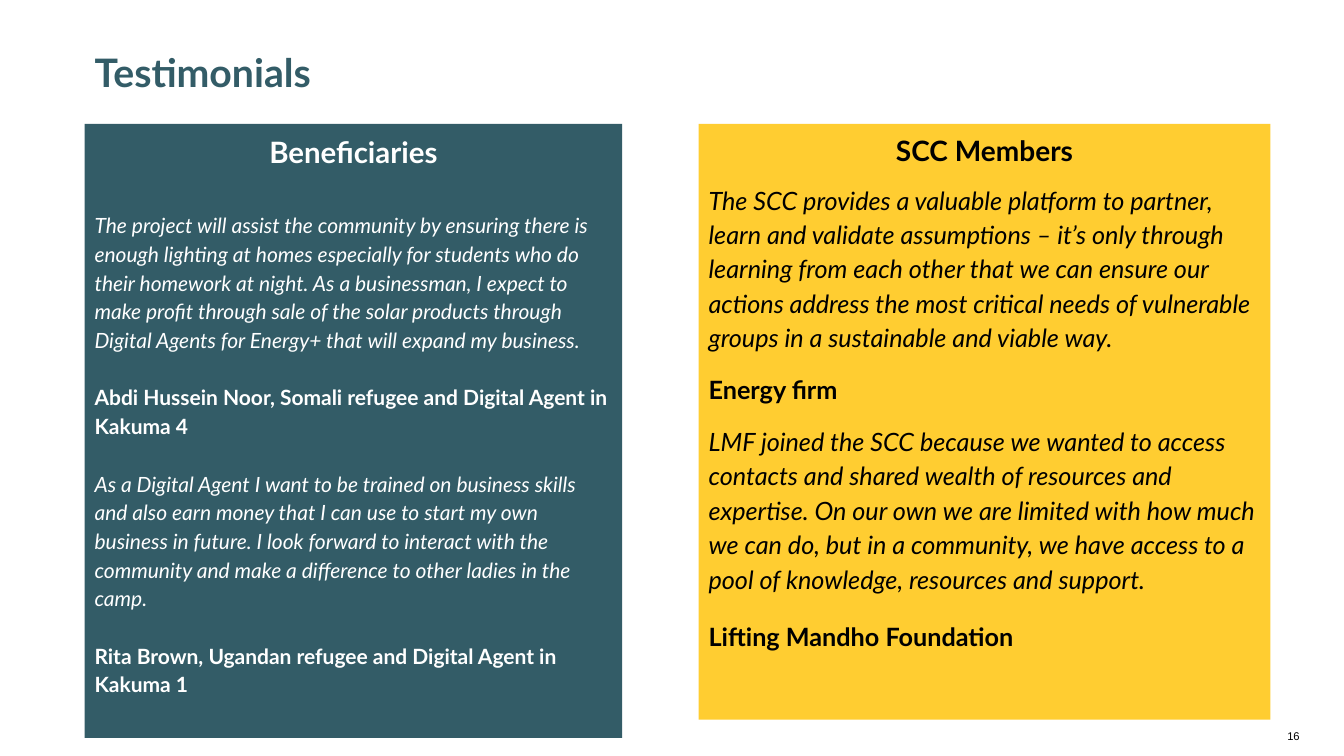
from pptx import Presentation
from pptx.dml.color import RGBColor
from pptx.enum.shapes import MSO_SHAPE
from pptx.enum.text import MSO_ANCHOR, PP_ALIGN
from pptx.util import Inches, Pt

COLORS = {"teal": "335C67", "gold": "FFCD31", "white": "FFFFFF", "black": "000000"}


def rgb(name):
    return RGBColor.from_string(COLORS[name])


def write(para, text, size, color, font="Lato", bold=False, italic=False):
    para.text = text
    for run in para.runs:
        run.font.name = font
        run.font.size = Pt(size)
        run.font.bold = bold
        run.font.italic = italic
        run.font.color.rgb = rgb(color)


deck = Presentation()
deck.slide_width, deck.slide_height = Inches(13.33), Inches(7.5)
slide = deck.slides.add_slide(deck.slide_layouts[6])

# Title
title = slide.shapes.add_textbox(Inches(0.84), Inches(0.51), Inches(10.03), Inches(0.49))
frame = title.text_frame
frame.word_wrap = True
frame.vertical_anchor = MSO_ANCHOR.BOTTOM
write(frame.paragraphs[0], "Testimonials", 28, "teal", bold=True)
frame.paragraphs[0].line_spacing = 0.9

# Panels: left, width, height, fill, ink, head, head size, text size, quotes
# Each quote: gap before, words, gap before the speaker, speaker
panels = [
    (0.84, 5.33, 6.09, "teal", "white", "Beneficiaries", 21, 15, [
        (28.7,
         "The project will assist the community by ensuring there is enough "
         "lighting at homes especially for students who do their homework at "
         "night. As a businessman, I expect to make profit through sale of the "
         "solar products through Digital Agents for Energy+ that will expand "
         "my business.",
         20.5, "Abdi Hussein Noor, Somali refugee and Digital Agent in Kakuma 4"),
        (20.5,
         "As a Digital Agent I want to be trained on business skills and also "
         "earn money that I can use to start my own business in future. I look "
         "forward to interact with the community and make a difference to "
         "other ladies in the camp.",
         20.5, "Rita Brown, Ugandan refugee and Digital Agent in Kakuma 1"),
    ]),
    (6.93, 5.67, 5.91, "gold", "black", "SCC Members", 20, 18, [
        (9.6,
         "The SCC provides a valuable platform to partner, learn and validate "
         "assumptions – it’s only through learning from each other that we can "
         "ensure our actions address the most critical needs of vulnerable "
         "groups in a sustainable and viable way.",
         12.3, "Energy firm"),
        (12.3,
         "LMF joined the SCC because we wanted to access contacts and shared "
         "wealth of resources and expertise. On our own we are limited with "
         "how much we can do, but in a community, we have access to a pool of "
         "knowledge, resources and support.",
         16.4, "Lifting Mandho Foundation"),
    ]),
]

for left, width, height, fill, ink, head, head_size, size, quotes in panels:
    panel = slide.shapes.add_shape(
        MSO_SHAPE.RECTANGLE, Inches(left), Inches(1.23), Inches(width), Inches(height))
    panel.shadow.inherit = False
    panel.fill.solid()
    panel.fill.fore_color.rgb = rgb(fill)
    panel.line.fill.background()
    frame = panel.text_frame
    frame.word_wrap = True
    frame.vertical_anchor = MSO_ANCHOR.TOP

    write(frame.paragraphs[0], head, head_size, ink, bold=True)
    frame.paragraphs[0].alignment = PP_ALIGN.CENTER
    for gap, words, name_gap, name in quotes:
        for space, text, bold in ((gap, words, False), (name_gap, name, True)):
            para = frame.add_paragraph()
            write(para, text, size, ink, bold=bold, italic=not bold)
            para.alignment = PP_ALIGN.LEFT
            para.space_before = Pt(space)
    for para in frame.paragraphs:
        para.line_spacing = 1.14

# Page number
number = slide.shapes.add_textbox(Inches(11.13), Inches(7.24), Inches(1.86), Inches(0.18))
frame = number.text_frame
frame.word_wrap = True
frame.margin_top = frame.margin_bottom = Inches(0)
write(frame.paragraphs[0], "16", 8, "black", font="Arial")
frame.paragraphs[0].alignment = PP_ALIGN.RIGHT

deck.save("out.pptx")
